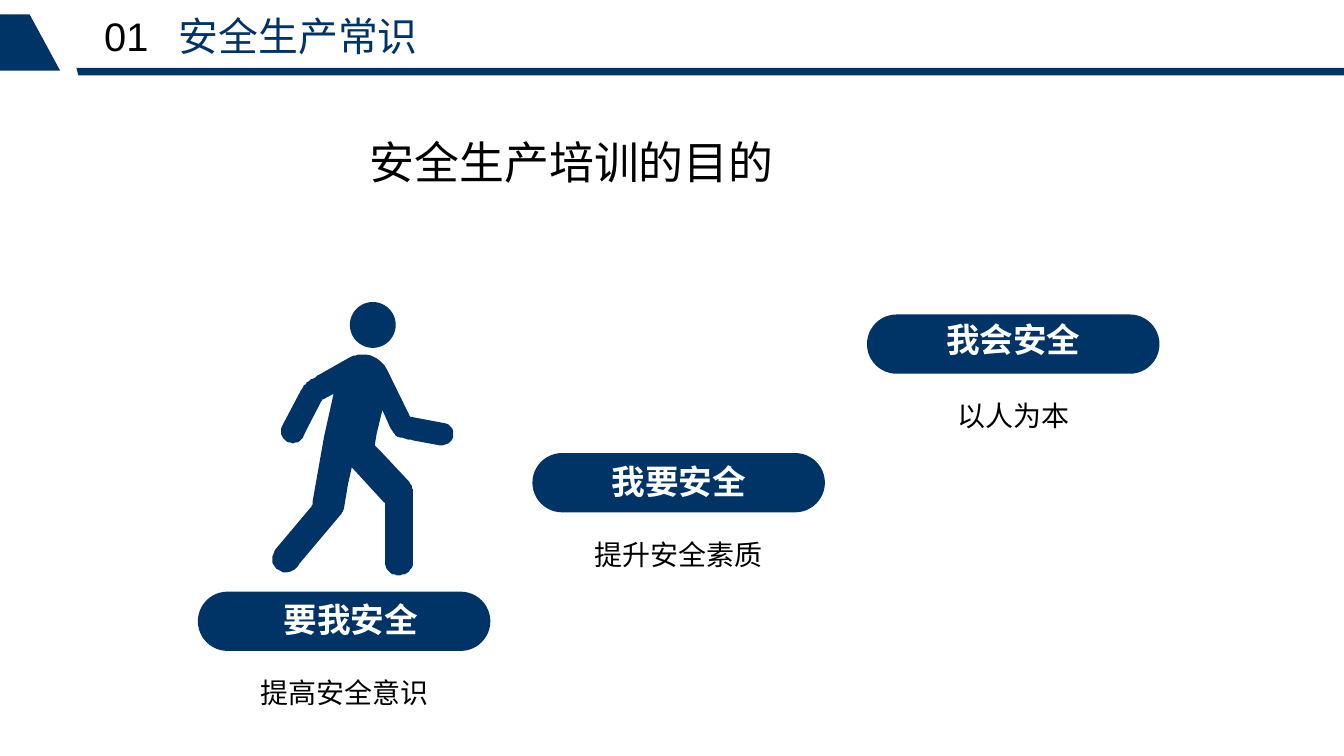
from dataclasses import dataclass

from lxml.etree import SubElement
from pptx import Presentation
from pptx.dml.color import RGBColor
from pptx.enum.shapes import MSO_SHAPE
from pptx.enum.text import MSO_ANCHOR, MSO_AUTO_SIZE, PP_ALIGN
from pptx.oxml.ns import qn
from pptx.util import Pt

COLS, ROWS = 1406, 791
CELL = 9144  # one square grid cell: a hundredth of an inch


@dataclass(frozen=True)
class Theme:
    navy: str = "003366"
    black: str = "000000"
    white: str = "FFFFFF"
    latin: str = "Arial"
    han: str = "Noto Sans CJK SC"
    head: float = 30
    topic: float = 33.8
    label: float = 25.3
    note: float = 21.1


# Pairs are straight lines, sixes are curves: two handles and an end point.
WALKER = [
    (405, 387), (400, 377, 389, 370, 377, 371), (372, 371, 368, 373, 364, 375),
    (334, 392), (330, 395, 325, 397, 321, 400), (318, 403, 316, 407, 314, 410),
    (295, 446), (293, 451, 294, 457, 298, 460), (301, 464, 306, 464, 311, 463),
    (316, 461, 318, 455, 320, 451), (336, 420), (337, 419, 337, 418, 338, 418),
    (349, 412), (339, 457), (336, 474), (327, 525), (327, 527, 327, 529, 325, 531),
    (288, 575), (285, 579, 284, 585, 285, 589), (288, 596, 296, 601, 304, 598),
    (308, 597, 311, 593, 313, 590), (356, 539), (358, 536, 360, 534, 360, 531),
    (364, 507), (368, 489), (402, 526), (403, 526, 403, 527, 403, 528),
    (403, 589), (403, 594, 406, 599, 411, 601), (415, 602, 419, 602, 423, 601),
    (428, 599, 432, 594, 432, 588), (432, 514), (432, 511, 430, 507, 428, 504),
    (399, 473), (392, 466), (394, 454), (400, 429), (408, 447),
    (410, 450, 412, 455, 416, 457), (421, 459, 427, 459, 433, 461),
    (460, 466), (466, 467, 473, 463, 474, 457), (475, 451, 472, 444, 466, 443),
    (429, 436),
]

# label, its nudge from the pill (across, down), note
STEPS = [
    ("要我安全", 7, 11, "提高安全意识"),
    ("我要安全", 0, 12, "提升安全素质"),
    ("我会安全", 0, 8, "以人为本"),
]


def cells(*counts):
    return [round(count * CELL) for count in counts]


def trace(path, parts=6):
    """Turn lines and cubic curves into a list of plain points."""
    points = [path[0]]
    for step in path[1:]:
        if len(step) == 2:
            points.append(step)
            continue
        knots = [points[-1], step[:2], step[2:4], step[4:]]
        for part in range(1, parts + 1):
            t = part / parts
            share = ((1 - t) ** 3, 3 * t * (1 - t) ** 2, 3 * t * t * (1 - t), t ** 3)
            points.append(tuple(
                sum(s * knot[axis] for s, knot in zip(share, knots))
                for axis in (0, 1)))
    return points


class Deck:
    def __init__(self, theme):
        self.theme = theme
        self.file = Presentation()
        self.file.slide_width, self.file.slide_height = cells(COLS, ROWS)
        self.slide = self.file.slides.add_slide(self.file.slide_layouts[5])
        self.shapes = self.slide.shapes

    def paint(self, shape):
        shape.shadow.inherit = False
        shape.fill.solid()
        shape.fill.fore_color.rgb = RGBColor.from_string(self.theme.navy)
        shape.line.fill.background()

    def block(self, kind, box, home=None):
        shape = (home or self.shapes).add_shape(kind, *cells(*box))
        self.paint(shape)
        return shape

    def outline(self, points, home=None):
        pen = (home or self.shapes).build_freeform(*points[0], scale=CELL)
        pen.add_line_segments(points[1:], close=True)
        self.paint(pen.convert_to_shape())

    def style(self, run, size, color, face=None, bold=False):
        face = face or self.theme.han
        run.font.name = face
        run.font.size = Pt(size)
        run.font.bold = bold
        run.font.color.rgb = RGBColor.from_string(color)
        SubElement(run.font._element, qn("a:ea")).set("typeface", face)

    def title(self, number, words, box, gap):
        shape = self.shapes.title
        shape.left, shape.top, shape.width, shape.height = cells(*box)
        frame = shape.text_frame
        frame.auto_size = MSO_AUTO_SIZE.NONE
        frame.vertical_anchor = MSO_ANCHOR.TOP
        frame.margin_left = frame.margin_top = 0
        frame.margin_right = frame.margin_bottom = 0
        frame.text = number + "\t"
        line = frame.paragraphs[0]
        line.alignment = PP_ALIGN.LEFT
        tabs = SubElement(line._p.get_or_add_pPr(), qn("a:tabLst"))
        stop = SubElement(tabs, qn("a:tab"))
        stop.set("pos", str(gap * CELL))
        stop.set("algn", "l")
        self.style(line.runs[0], self.theme.head, self.theme.black, self.theme.latin)
        name = line.add_run()
        name.text = words
        self.style(name, self.theme.head, self.theme.navy)

    def text(self, words, box, size, color, bold=False):
        frame = self.shapes.add_textbox(*cells(*box)).text_frame
        frame.text = words
        frame.word_wrap = True
        self.style(frame.paragraphs[0].runs[0], size, color, bold=bold)
        return frame

    def caption(self, words, center, top, wide, high, size, color, bold=False):
        frame = self.text(words, (center - wide / 2, top, wide, high), size, color, bold)
        frame.word_wrap = False
        frame.paragraphs[0].alignment = PP_ALIGN.CENTER
        frame.paragraphs[0].line_spacing = 0.8

    def walker(self):
        group = self.shapes.add_group_shape().shapes
        self.block(MSO_SHAPE.OVAL, (366, 316, 48, 48), group)
        self.outline(trace(WALKER), group)

    def stair(self, index, label, across, down, note):
        left, top, wide, high = 207 + 350 * index, 619 - 145 * index, 306, 62
        center = left + wide / 2
        pill = self.block(MSO_SHAPE.ROUNDED_RECTANGLE, (left, top, wide, high))
        pill.adjustments[0] = 0.5
        theme = self.theme
        self.caption(label, center + across, top + down, 161, 44,
                     theme.label, theme.white, True)
        self.caption(note, center, top + 90, 20 + 29.3 * len(note), 38,
                     theme.note, theme.black)


def main():
    theme = Theme()
    deck = Deck(theme)
    deck.title("01", "安全生产常识", (109, 12, 857, 50), 78)
    deck.outline([(31, 15), (63, 74), (0, 74), (0, 15)])
    deck.outline([(80, 71), (COLS, 71), (COLS, 79), (82, 79)])
    topic = deck.text("安全生产培训的目的", (377, 136, 527, 67), theme.topic, theme.black)
    topic.vertical_anchor = MSO_ANCHOR.MIDDLE
    deck.walker()
    for index, step in enumerate(STEPS):
        deck.stair(index, *step)
    deck.file.save("out.pptx")


if __name__ == "__main__":
    main()
